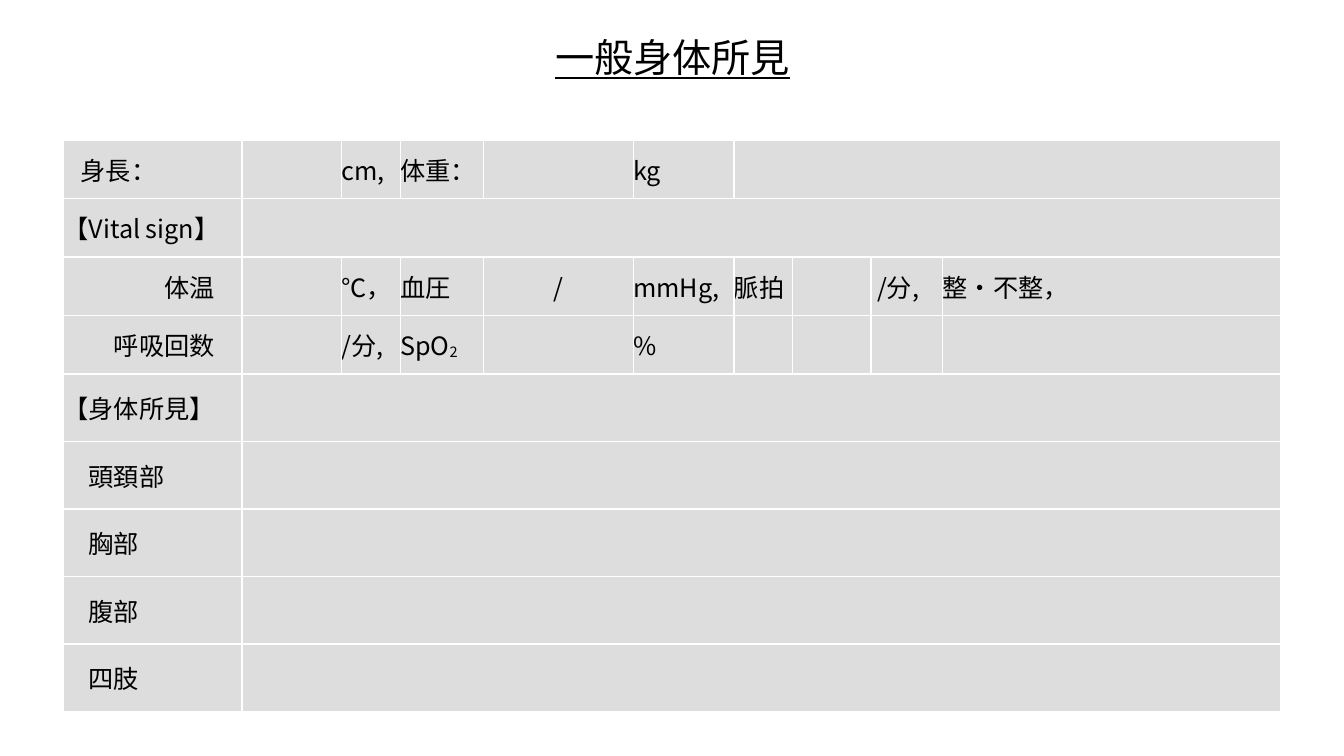
from lxml.etree import SubElement
from pptx import Presentation
from pptx.dml.color import RGBColor
from pptx.enum.text import MSO_ANCHOR, PP_ALIGN
from pptx.oxml import parse_xml
from pptx.oxml.ns import nsdecls, qn
from pptx.util import Inches, Pt

COLUMN_WIDTHS = [1.77, 0.99, 0.58, 0.83, 1.48, 1, 0.58, 0.78, 0.71, 3.35]
ROW_HEIGHTS = [0.58] * 4 + [0.67] * 5
FINDINGS = [
    {0: "身長：", 2: "cm,", 3: "体重：", 5: "kg"},
    {0: "【Vital sign】"},
    {0: "体温", 2: "℃，", 3: "血圧", 4: "/", 5: "mmHg,", 6: "脈拍", 8: "/分,", 9: "整・不整，"},
    {0: "呼吸回数", 2: "/分,", 3: "SpO", 5: "%"},
    {0: "【身体所見】"},
    {0: "頭頚部"},
    {0: "胸部"},
    {0: "腹部"},
    {0: "四肢"},
]
MERGE_STARTS = {0: 6, 1: 1, 4: 1, 5: 1, 6: 1, 7: 1, 8: 1}
LEFT_INDENTS = {(0, 0): 0.17, (2, 8): 0.06} | {(row, 0): 0.25 for row in range(5, 9)}
VITAL_LABELS = [(2, 0), (3, 0)]
PRESSURE_SLASH = (2, 4)
OXYGEN_LABEL = (3, 3)


def colour(value):
    return RGBColor.from_string(value)


class FindingsSlide:
    """Holds the style and the slide, and adds its title and table."""

    font = "Noto Sans CJK JP"
    ink = "000000"
    cell_fill = "DDDDDD"
    rule = "FFFFFF"

    def __init__(self, presentation):
        self.slide = presentation.slides.add_slide(presentation.slide_layouts[5])

    def add_run(self, paragraph, text, size, underline=None, baseline=None):
        run = paragraph.add_run()
        run.text = text
        run.font.size = Pt(size)
        run.font.name = self.font
        run.font.underline = underline
        run.font.color.rgb = colour(self.ink)
        properties = run.font._element
        SubElement(properties, qn("a:ea")).set("typeface", self.font)
        if baseline is not None:
            properties.set("baseline", str(baseline))

    def add_title(self, text, left, top, width, height):
        title = self.slide.shapes.title
        title.left, title.top = Inches(left), Inches(top)
        title.width, title.height = Inches(width), Inches(height)
        frame = title.text_frame
        frame.margin_left = frame.margin_right = Inches(0.05)
        frame.margin_top = frame.margin_bottom = Inches(0.05)
        frame.vertical_anchor = MSO_ANCHOR.MIDDLE
        frame.paragraphs[0].alignment = PP_ALIGN.CENTER
        self.add_run(frame.paragraphs[0], text, 28, underline=True)

    def style_cell(self, cell):
        cell.margin_left = cell.margin_right = Inches(0)
        cell.margin_top = cell.margin_bottom = Inches(0)
        cell.vertical_anchor = MSO_ANCHOR.MIDDLE
        cell.fill.solid()
        cell.fill.fore_color.rgb = colour(self.cell_fill)
        properties = cell._tc.get_or_add_tcPr()
        for index, side in enumerate(["lnL", "lnR", "lnT", "lnB"]):
            border = parse_xml(
                f'<a:{side} {nsdecls("a")} w="{Pt(1)}"><a:solidFill>'
                f'<a:srgbClr val="{self.rule}"/></a:solidFill></a:{side}>'
            )
            properties.insert(index, border)

    def fill_cell(self, cell, position, text):
        paragraph = cell.text_frame.paragraphs[0]
        cell.margin_left = Inches(LEFT_INDENTS.get(position, 0))
        if position in VITAL_LABELS:
            paragraph.alignment = PP_ALIGN.RIGHT
            cell.margin_right = Inches(0.27)
        elif position == PRESSURE_SLASH:
            paragraph.alignment = PP_ALIGN.CENTER
        self.add_run(paragraph, text, 18)
        if position == OXYGEN_LABEL:
            self.add_run(paragraph, "2", 18, baseline=-6000)

    def add_table(self, left, top):
        frame = self.slide.shapes.add_table(
            len(ROW_HEIGHTS), len(COLUMN_WIDTHS), Inches(left), Inches(top),
            Inches(sum(COLUMN_WIDTHS)), Inches(sum(ROW_HEIGHTS)),
        )
        table = frame.table
        table.first_row = table.horz_banding = False
        for column, width in zip(table.columns, COLUMN_WIDTHS):
            column.width = Inches(width)
        for row, height in zip(table.rows, ROW_HEIGHTS):
            row.height = Inches(height)
        for cell in table.iter_cells():
            self.style_cell(cell)
        for row, start in MERGE_STARTS.items():
            table.cell(row, start).merge(table.cell(row, len(COLUMN_WIDTHS) - 1))
        for row, texts in enumerate(FINDINGS):
            for column, text in texts.items():
                self.fill_cell(table.cell(row, column), (row, column), text)


def main():
    presentation = Presentation()
    presentation.slide_width = Inches(13.33)
    presentation.slide_height = Inches(7.5)
    findings = FindingsSlide(presentation)
    findings.add_title("一般身体所見", 2.17, 0.1, 9, 0.92)
    findings.add_table(0.63, 1.39)
    presentation.save("out.pptx")


if __name__ == "__main__":
    main()
